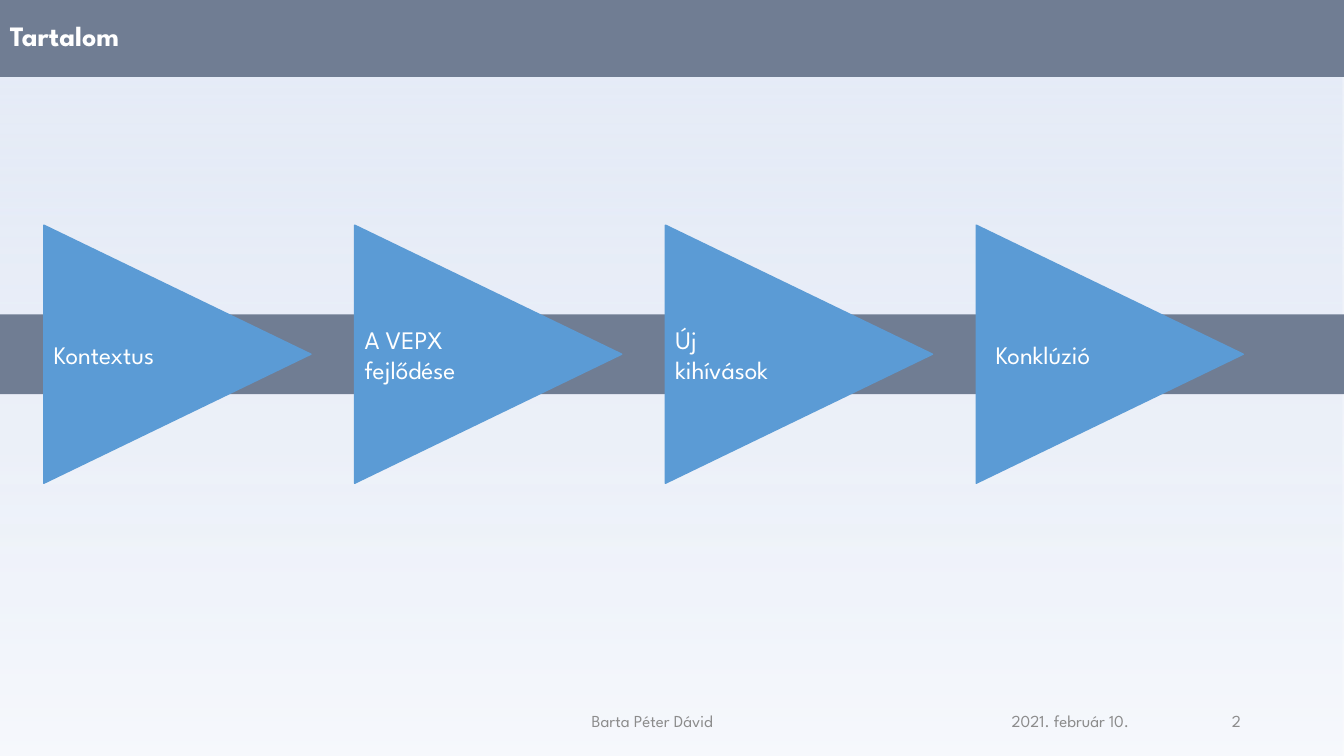
from dataclasses import dataclass

from lxml import etree
from pptx import Presentation
from pptx.dml.color import RGBColor
from pptx.enum import shapes, text
from pptx.oxml import ns
from pptx.util import Pt


@dataclass(frozen=True)
class Theme:
    font: str = "League Spartan"
    band: RGBColor = RGBColor(0x70, 0x7D, 0x93)
    step: RGBColor = RGBColor(0x5B, 0x9B, 0xD5)
    light: RGBColor = RGBColor(0xFF, 0xFF, 0xFF)
    muted: RGBColor = RGBColor(0x8C, 0x8C, 0x8C)
    title_size: int = 20
    step_size: int = 18
    footer_size: int = 12
    # Position in percent, colour, opacity in percent
    backdrop: tuple = (
        (0, "F6F8FC", 100),
        (67, "E2E9F6", 80),
        (83, "D6E0F2", 60),
        (100, "C5D3ED", 40),
    )


THEME = Theme()
ALIGN = text.PP_ALIGN
WIDTH, HEIGHT = 960, 540
BAND_HEIGHT = 56.9


def add_block(page, kind, left, top, width, height, color=None):
    block = page.shapes.add_shape(kind, Pt(left), Pt(top), Pt(width), Pt(height))
    block.shadow.inherit = False
    block.line.fill.background()
    if color is not None:
        block.fill.solid()
        block.fill.fore_color.rgb = color
    return block


def write(box, words, size, color, align=ALIGN.LEFT, bold=False):
    frame = box.text_frame
    frame.word_wrap = True
    frame.vertical_anchor = text.MSO_ANCHOR.MIDDLE
    frame.text = words
    para = frame.paragraphs[0]
    para.alignment = align
    for span in para.runs:
        span.font.name = THEME.font
        span.font.size = Pt(size)
        span.font.bold = bold
        span.font.color.rgb = color
    return para


def add_backdrop(page):
    block = add_block(page, shapes.MSO_SHAPE.RECTANGLE, 0, 0, WIDTH, HEIGHT)
    block.fill.gradient()
    block.fill.gradient_angle = 90  # runs from the bottom up
    # Stops with transparency
    stops = block._element.spPr.find(".//" + ns.qn("a:gsLst"))
    for old in list(stops):
        stops.remove(old)
    for position, color, opacity in THEME.backdrop:
        stop = etree.SubElement(stops, ns.qn("a:gs"), pos=str(position * 1000))
        tint = etree.SubElement(stop, ns.qn("a:srgbClr"), val=color)
        if opacity < 100:
            etree.SubElement(tint, ns.qn("a:alpha"), val=str(opacity * 1000))


def add_band(page, top):
    return add_block(page, shapes.MSO_SHAPE.RECTANGLE, 0, top, WIDTH, BAND_HEIGHT, THEME.band)


def add_step(page, left, words, align):
    step = add_block(page, shapes.MSO_SHAPE.ISOSCELES_TRIANGLE,
                     left, 157.6, 184.4, 190.8, THEME.step)
    step.line.color.rgb = THEME.step
    step.line.width = Pt(1)
    step.rotation = 90
    write(step, words, THEME.step_size, THEME.light, align)
    # Turn the text back to horizontal
    step.text_frame._txBody.bodyPr.set("vert", "vert270")


def add_footer(page, left, width, words, align):
    box = page.shapes.add_textbox(Pt(left), Pt(500.5), Pt(width), Pt(28.75))
    write(box, words, THEME.footer_size, THEME.muted, align)


def main():
    deck = Presentation()
    deck.slide_width, deck.slide_height = Pt(WIDTH), Pt(HEIGHT)
    page = deck.slides.add_slide(deck.slide_layouts[6])

    # Backdrop and title
    add_backdrop(page)
    title = write(add_band(page, -2), "Tartalom", THEME.title_size, THEME.light, bold=True)
    title.line_spacing = 0.9

    # Footer
    add_footer(page, 715.5, 141.5, "2021. február 10.", ALIGN.LEFT)
    add_footer(page, 256, 420, "Barta Péter Dávid", ALIGN.CENTER)
    add_footer(page, 857, 36.5, "2", ALIGN.RIGHT)

    # Steps along the middle band
    add_band(page, 224.6)
    steps = (
        ("Kontextus", ALIGN.LEFT),
        ("A VEPX fejlődése", ALIGN.LEFT),
        ("Új kihívások", ALIGN.LEFT),
        ("Konklúzió", ALIGN.CENTER),
    )
    for index, (words, align) in enumerate(steps):
        add_step(page, 34.5 + 222 * index, words, align)

    deck.save("out.pptx")


if __name__ == "__main__":
    main()
